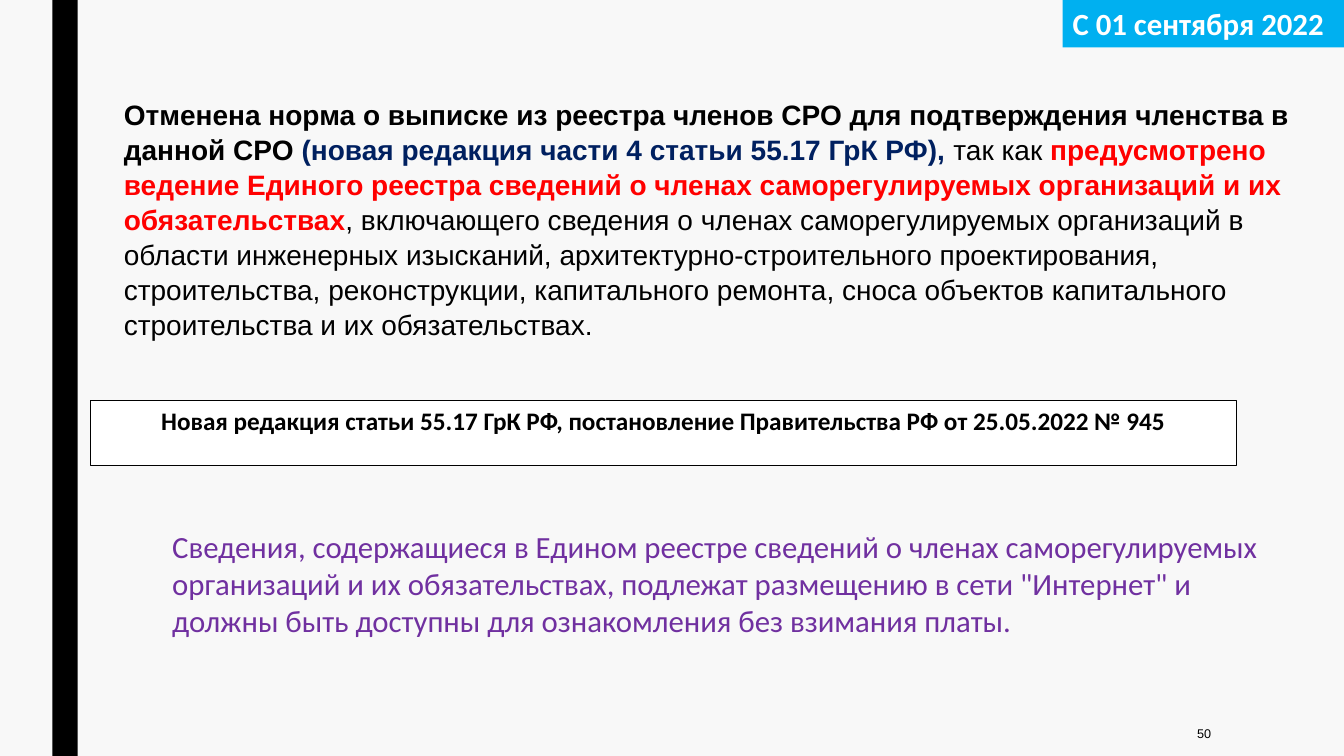
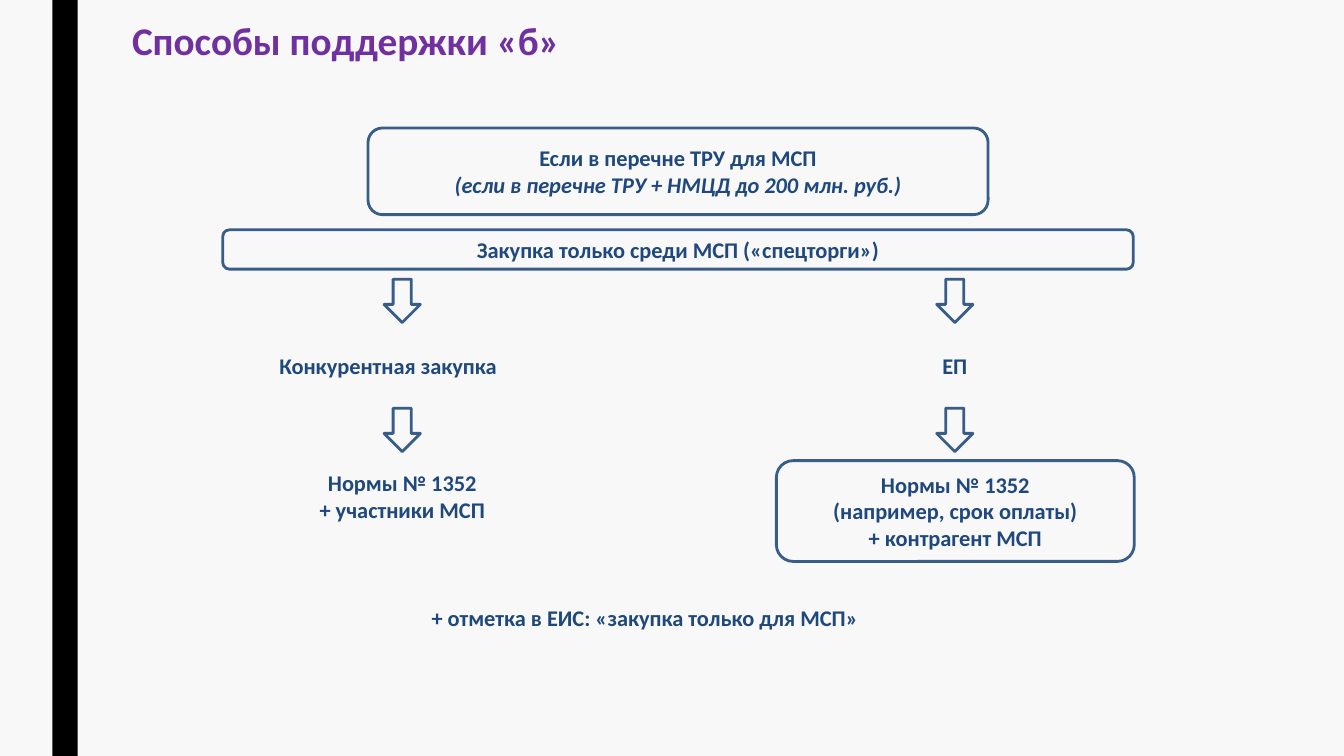
from pptx import Presentation
from pptx import util as u
from pptx.dml.color import RGBColor
from pptx.enum import shapes, text

# Shared look
BLACK = RGBColor(0x00, 0x00, 0x00)
WHITE = RGBColor(0xFF, 0xFF, 0xFF)
PAPER = RGBColor(0xF8, 0xF8, 0xF8)
PURPLE = RGBColor(0x70, 0x30, 0xA0)
NAVY = RGBColor(0x00, 0x20, 0x60)
RED = RGBColor(0xFF, 0x00, 0x00)
SKY = RGBColor(0x00, 0xB0, 0xF0)
EDGE = RGBColor(0x38, 0x5D, 0x89)
INK = RGBColor(0x1F, 0x48, 0x7C)

KIND = shapes.MSO_SHAPE
LEFT, MID, RIGHT = text.PP_ALIGN.LEFT, text.PP_ALIGN.CENTER, text.PP_ALIGN.RIGHT
TOP, HALF = text.MSO_ANCHOR.TOP, text.MSO_ANCHOR.MIDDLE
PAD = (0.1, 0.05)

TITLE = dict(name="Calibri", size=28, bold=True, color=PURPLE)
BODY = dict(name="Arial", size=20, color=BLACK)
NOTE = dict(name="Calibri", size=22, color=PURPLE)
LAW = dict(name="Calibri", size=18, bold=True, color=BLACK)
DATE = dict(name="Calibri", size=22, bold=True, color=WHITE)
PAGE = dict(name="Arial", size=9, color=BLACK)
STEP = dict(name="Calibri", size=16, bold=True, color=INK)

# Content: a paragraph is a list of (words, changes to the style)
NORM = [[
    ("Отменена норма о выписке из реестра членов СРО для подтверждения "
     "членства в данной СРО ", dict(bold=True)),
    ("(новая редакция части 4 статьи 55.17 ГрК РФ), ", dict(bold=True, color=NAVY)),
    ("так как ", {}),
    ("предусмотрено ведение Единого реестра сведений о членах саморегулируемых "
     "организаций и их обязательствах", dict(bold=True, color=RED)),
    (", включающего сведения о членах саморегулируемых организаций в области "
     "инженерных изысканий, архитектурно-строительного проектирования, "
     "строительства, реконструкции, капитального ремонта, сноса объектов "
     "капитального строительства и их обязательствах.", {}),
]]
ACCESS = ("Сведения, содержащиеся в Едином реестре сведений о членах "
          "саморегулируемых организаций и их обязательствах, подлежат размещению "
          "в сети \"Интернет\" и должны быть доступны для ознакомления без "
          "взимания платы.")
ACT = ("Новая редакция статьи 55.17 ГрК РФ, постановление Правительства РФ "
       "от 25.05.2022 № 945")

# Flow chart: place, paragraphs
BOXES = [
    ((3.65, 1.27, 6.15, 0.86), [
        "Если в перечне ТРУ для МСП",
        [("(если в перечне ТРУ + НМЦД до 200 млн. руб.)", dict(italic=True))]]),
    ((2.21, 2.28, 9.03, 0.39), ["Закупка только среди МСП («спецторги»)"]),
    ((7.7, 4.57, 3.55, 1), [
        "Нормы № 1352", "(например, срок оплаты)", "+ контрагент МСП"]),
]
LABELS = [
    ((2.77, 3.4, 2.99, 0.46), LEFT, ["Конкурентная закупка"]),
    ((7.7, 3.4, 3.54, 0.46), MID, ["ЕП"]),
    ((2.22, 4.57, 3.54, 0.7), MID, ["Нормы № 1352", "+ участники МСП"]),
    ((4.28, 5.9, 5.52, 0.46), LEFT, ["+ отметка в ЕИС: «закупка только для МСП»"]),
]
COLS, ROWS = (3.99, 9.47), (2.77, 4.05)
ARROW = (0.36, 0.43)


def write(item, paras, style, align=LEFT, anchor=TOP, pad=PAD, space=None):
    frame = item.text_frame
    form = dict(word_wrap=True, vertical_anchor=anchor,
                margin_left=u.Inches(pad[0]), margin_right=u.Inches(pad[0]),
                margin_top=u.Inches(pad[1]), margin_bottom=u.Inches(pad[1]))
    for key, value in form.items():
        setattr(frame, key, value)
    for i, runs in enumerate(paras):
        para = frame.add_paragraph() if i else frame.paragraphs[0]
        para.alignment = align
        if space:
            para.line_spacing = space
        for words, change in [(runs, {})] if isinstance(runs, str) else runs:
            run = para.add_run()
            run.text = words
            look = {**style, **change}
            run.font.color.rgb = look.pop("color")
            look["size"] = u.Pt(look["size"])
            for key, value in look.items():
                setattr(run.font, key, value)


def label(slide, place, paras, style, **form):
    item = slide.shapes.add_textbox(*map(u.Inches, place))
    write(item, paras, style, **form)


def draw(slide, kind, place, fill=None, line=None, width=2):
    item = slide.shapes.add_shape(kind, *map(u.Inches, place))
    item.shadow.inherit = False
    for part, color in ((item.fill, fill), (item.line.fill, line)):
        if color is None:
            part.background()
        else:
            part.solid()
            part.fore_color.rgb = color
    if line is not None:
        item.line.width = u.Pt(width)
    return item


def start(deck):
    slide = deck.slides.add_slide(deck.slide_layouts[6])
    draw(slide, KIND.RECTANGLE, (0.52, 0, 0.25, 7.5), BLACK)
    return slide


def norm(deck):
    slide = start(deck)
    label(slide, (10.36, 7.06, 1.75, 0.44), ["50"], PAGE, align=RIGHT, anchor=HALF)
    label(slide, (1.61, 5.19, 11.15, 1.21), [ACCESS], NOTE)
    act = draw(slide, KIND.RECTANGLE, (0.9, 3.97, 11.36, 0.65), WHITE, BLACK, 0.75)
    write(act, [ACT], LAW, align=MID)
    date = draw(slide, KIND.RECTANGLE, (10.54, 0, 2.79, 0.47), SKY)
    write(date, ["С 01 сентября 2022"], DATE)
    label(slide, (1.13, 0.91, 11.9, 2.46), NORM, BODY, space=1.04)


def support(deck):
    slide = start(deck)
    label(slide, (1.31, 0.16, 5.7, 0.47), ["Способы поддержки «б»"], TITLE,
          anchor=text.MSO_ANCHOR.BOTTOM, pad=(0, 0))
    for place, paras in BOXES:
        box = draw(slide, KIND.ROUNDED_RECTANGLE, place, line=EDGE)
        write(box, paras, STEP, align=MID, anchor=HALF, pad=(0, 0))
    for place, align, paras in LABELS:
        label(slide, place, paras, STEP, align=align, anchor=HALF, pad=(0, 0))
    # Arrows centred on each column
    wide, high = ARROW
    for mid in COLS:
        for top in ROWS:
            draw(slide, KIND.DOWN_ARROW, (mid - wide / 2, top, wide, high), line=EDGE)


def main():
    deck = Presentation()
    deck.slide_width, deck.slide_height = u.Inches(13.33), u.Inches(7.5)
    back = deck.slide_master.background.fill
    back.solid()
    back.fore_color.rgb = PAPER
    norm(deck)
    support(deck)
    deck.save("out.pptx")


if __name__ == "__main__":
    main()
